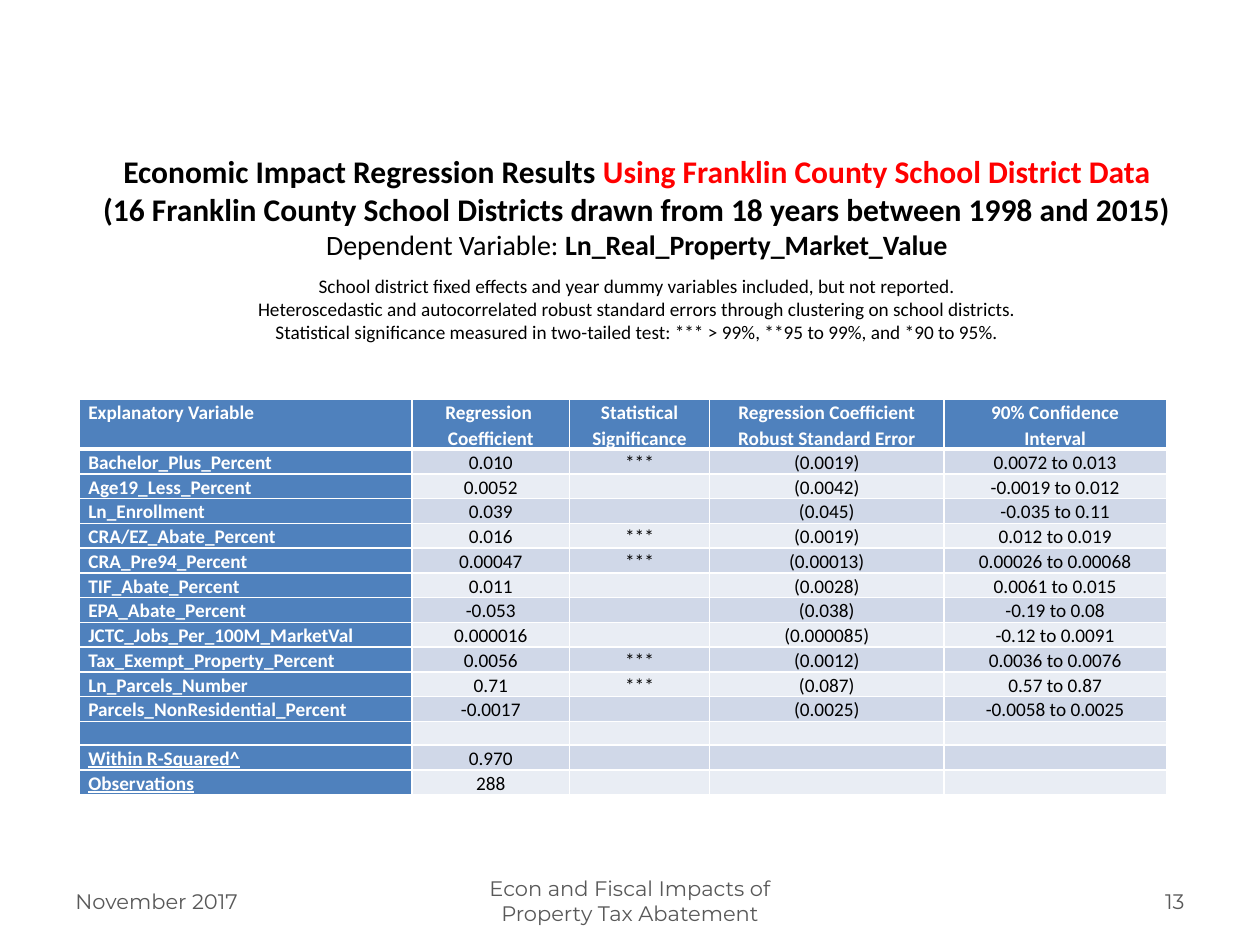
from dataclasses import dataclass

from lxml.etree import SubElement
from pptx import Presentation
from pptx.dml.color import RGBColor
from pptx.enum.text import MSO_ANCHOR, MSO_AUTO_SIZE, PP_ALIGN
from pptx.oxml.ns import qn
from pptx.util import Pt


@dataclass(frozen=True)
class Theme:
    body: str = "Calibri"
    foot: str = "Montserrat"
    black: str = "000000"
    white: str = "FFFFFF"
    red: str = "FF0000"
    gray: str = "595959"
    blue: str = "4F81BD"
    bands: tuple = ("D0D8E8", "E9EDF4")
    head: float = 18
    sub: float = 16
    small: float = 11
    note: float = 12


class Deck:
    def __init__(self, theme):
        self.theme = theme
        self.prs = Presentation()
        self.prs.slide_width, self.prs.slide_height = Pt(720), Pt(540)
        self.slide = self.prs.slides.add_slide(self.prs.slide_layouts[5])

    def style(self, run, size, color, bold=False, face=None, under=False):
        font = run.font
        font.name = face or self.theme.body
        font.size, font.bold, font.underline = Pt(size), bold, under
        font.color.rgb = RGBColor.from_string(color)

    def title(self, box, lines):
        """Each line is (space before, [(text, size, color, bold), ...])."""
        shape = self.slide.shapes.title
        shape.left, shape.top, shape.width, shape.height = map(Pt, box)
        frame = shape.text_frame
        frame.word_wrap = False
        frame.auto_size = MSO_AUTO_SIZE.SHAPE_TO_FIT_TEXT
        frame.vertical_anchor = MSO_ANCHOR.MIDDLE
        for i, (gap, parts) in enumerate(lines):
            para = frame.add_paragraph() if i else frame.paragraphs[0]
            para.alignment = PP_ALIGN.CENTER
            para.space_before = Pt(gap)
            for text, size, color, bold in parts:
                run = para.add_run()
                run.text = text
                self.style(run, size, color, bold)

    def footer(self, left, width, text, align):
        shape = self.slide.shapes.add_textbox(Pt(left), Pt(500.5), Pt(width), Pt(28.75))
        frame = shape.text_frame
        frame.word_wrap = True
        frame.vertical_anchor = MSO_ANCHOR.MIDDLE
        frame.text = text
        para = frame.paragraphs[0]
        para.alignment = align
        self.style(para.runs[0], self.theme.note, self.theme.gray, face=self.theme.foot)

    def border(self, cell, row):
        props = cell._tc.get_or_add_tcPr()
        thick = {0: "lnB", 1: "lnT"}.get(row)
        for side in ("lnL", "lnR", "lnT", "lnB"):
            width = Pt(3 if side == thick else 1)
            line = SubElement(props, qn(f"a:{side}"), w=str(width))
            fill = SubElement(line, qn("a:solidFill"))
            SubElement(fill, qn("a:srgbClr"), val=self.theme.white)

    def cell(self, cell, text, row, col):
        t = self.theme
        label = row == 0 or col == 0
        cell.margin_left = cell.margin_right = Pt(5)
        cell.margin_top = cell.margin_bottom = 0
        self.border(cell, row)
        cell.fill.solid()
        cell.fill.fore_color.rgb = RGBColor.from_string(
            t.blue if label else t.bands[(row - 1) % 2])
        cell.text_frame.text = text
        for para in cell.text_frame.paragraphs:
            para.alignment = PP_ALIGN.CENTER if col else PP_ALIGN.LEFT
            para.line_spacing = 1.07
            for run in para.runs:
                self.style(run, t.small, t.white if label else t.black, label,
                           under=text in TOTALS)
            if not text:  # keeps an empty row as low as the others
                SubElement(para._p, qn("a:endParaRPr"), sz=str(t.small * 100))

    def table(self, left, top, widths, height, rows):
        shape = self.slide.shapes.add_table(
            len(rows), len(widths), Pt(left), Pt(top),
            Pt(sum(widths)), Pt(height * (len(rows) + 1)))
        grid = shape.table
        grid.horz_banding = False
        for col, width in zip(grid.columns, widths):
            col.width = Pt(width)
        for r, texts in enumerate(rows):
            grid.rows[r].height = Pt(height if r else 2 * height)
            for c in range(len(widths)):
                self.cell(grid.cell(r, c), texts[c] if c < len(texts) else "", r, c)


TOTALS = ("Within R-Squared^", "Observations")
ROWS = [
    ("Explanatory Variable", "Regression \nCoefficient", "Statistical Significance",
     "Regression Coefficient Robust Standard Error", "90% Confidence\nInterval"),
    ("Bachelor_Plus_Percent", "0.010", "***", "(0.0019)", "0.0072 to 0.013"),
    ("Age19_Less_Percent", "0.0052", "", "(0.0042)", "-0.0019 to 0.012"),
    ("Ln_Enrollment", "0.039", "", "(0.045)", "-0.035 to 0.11"),
    ("CRA/EZ_Abate_Percent", "0.016", "***", "(0.0019)", "0.012 to 0.019"),
    ("CRA_Pre94_Percent", "0.00047", "***", "(0.00013)", "0.00026 to 0.00068"),
    ("TIF_Abate_Percent", "0.011", "", "(0.0028)", "0.0061 to 0.015"),
    ("EPA_Abate_Percent", "-0.053", "", "(0.038)", "-0.19 to 0.08"),
    ("JCTC_Jobs_Per_100M_MarketVal", "0.000016", "", "(0.000085)", "-0.12 to 0.0091"),
    ("Tax_Exempt_Property_Percent", "0.0056", "***", "(0.0012)", "0.0036 to 0.0076"),
    ("Ln_Parcels_Number", "0.71", "***", "(0.087)", "0.57 to 0.87"),
    ("Parcels_NonResidential_Percent", "-0.0017", "", "(0.0025)", "-0.0058 to 0.0025"),
    (),
    (TOTALS[0], "0.970"),
    (TOTALS[1], "288"),
]
NOTES = [
    "School district fixed effects and year dummy variables included, but not reported.",
    "Heteroscedastic and autocorrelated robust standard errors through clustering on school districts.",
    "Statistical significance measured in two-tailed test: *** > 99%, **95 to 99%, and *90 to 95%.",
]


def main():
    t = Theme()
    deck = Deck(t)

    # Heading with the notes on method
    lines = [
        (0, [("Economic Impact Regression Results ", t.head, t.black, True),
             ("Using Franklin County School District Data", t.head, t.red, True)]),
        (0, [("(16 Franklin County School Districts drawn from 18 years "
              "between 1998 and 2015)", t.head, t.black, True)]),
        (0, [("Dependent Variable: ", t.sub, t.black, False),
             ("Ln_Real_Property_Market_Value", t.sub, t.black, True)]),
    ]
    lines += [(0 if i else 7.3, [(note, t.small, t.black, False)])
              for i, note in enumerate(NOTES)]
    deck.title((49, 82.8, 630, 117.4), lines)

    # Regression results
    deck.table(45.5, 228.4, (190, 90, 80, 134, 127), 13.6, ROWS)

    # Footer
    deck.footer(36, 168, "November 2017", PP_ALIGN.LEFT)
    deck.footer(246, 228, "Econ and Fiscal Impacts of Property Tax Abatement", PP_ALIGN.CENTER)
    deck.footer(516, 168, "13", PP_ALIGN.RIGHT)

    deck.prs.save("out.pptx")


if __name__ == "__main__":
    main()
